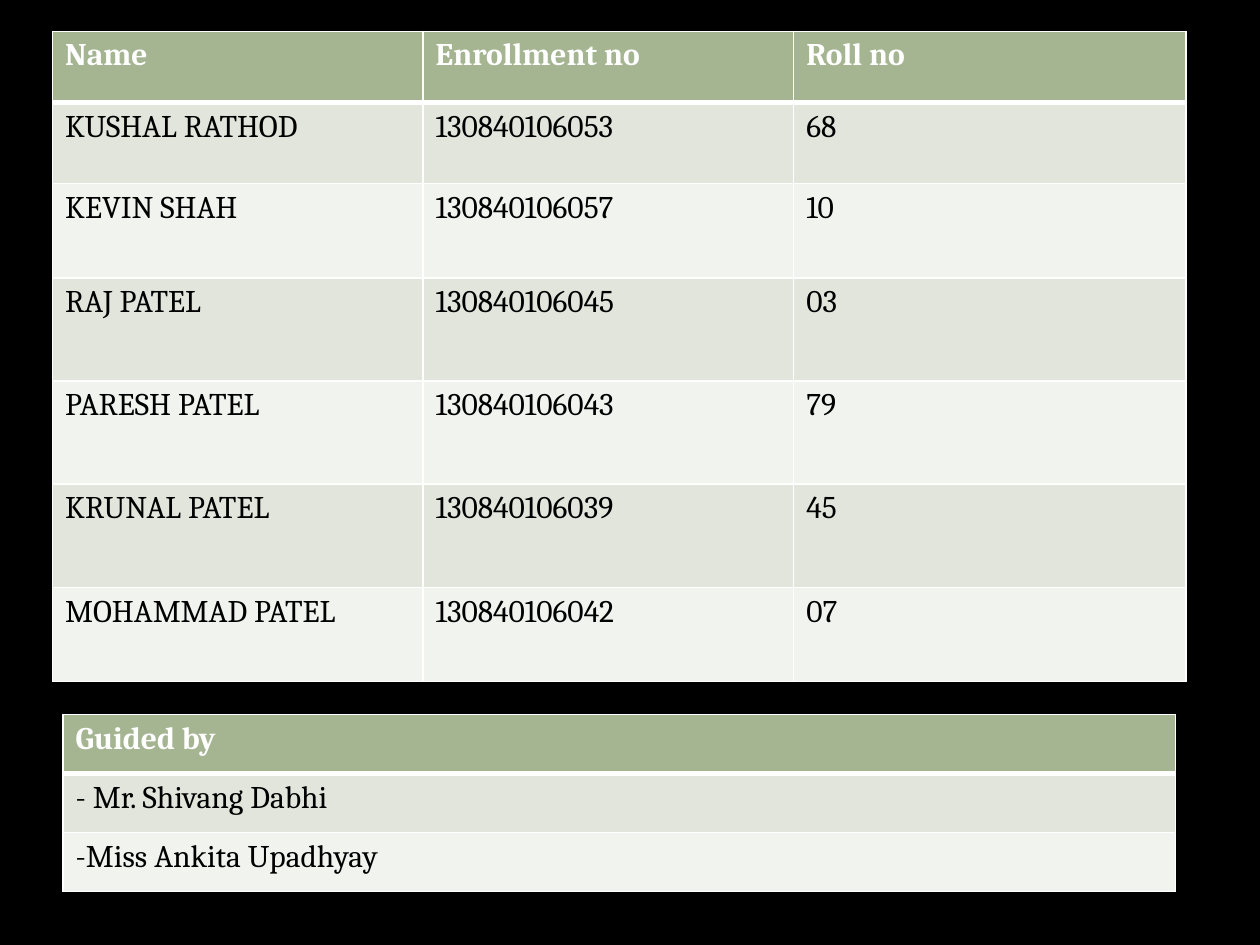
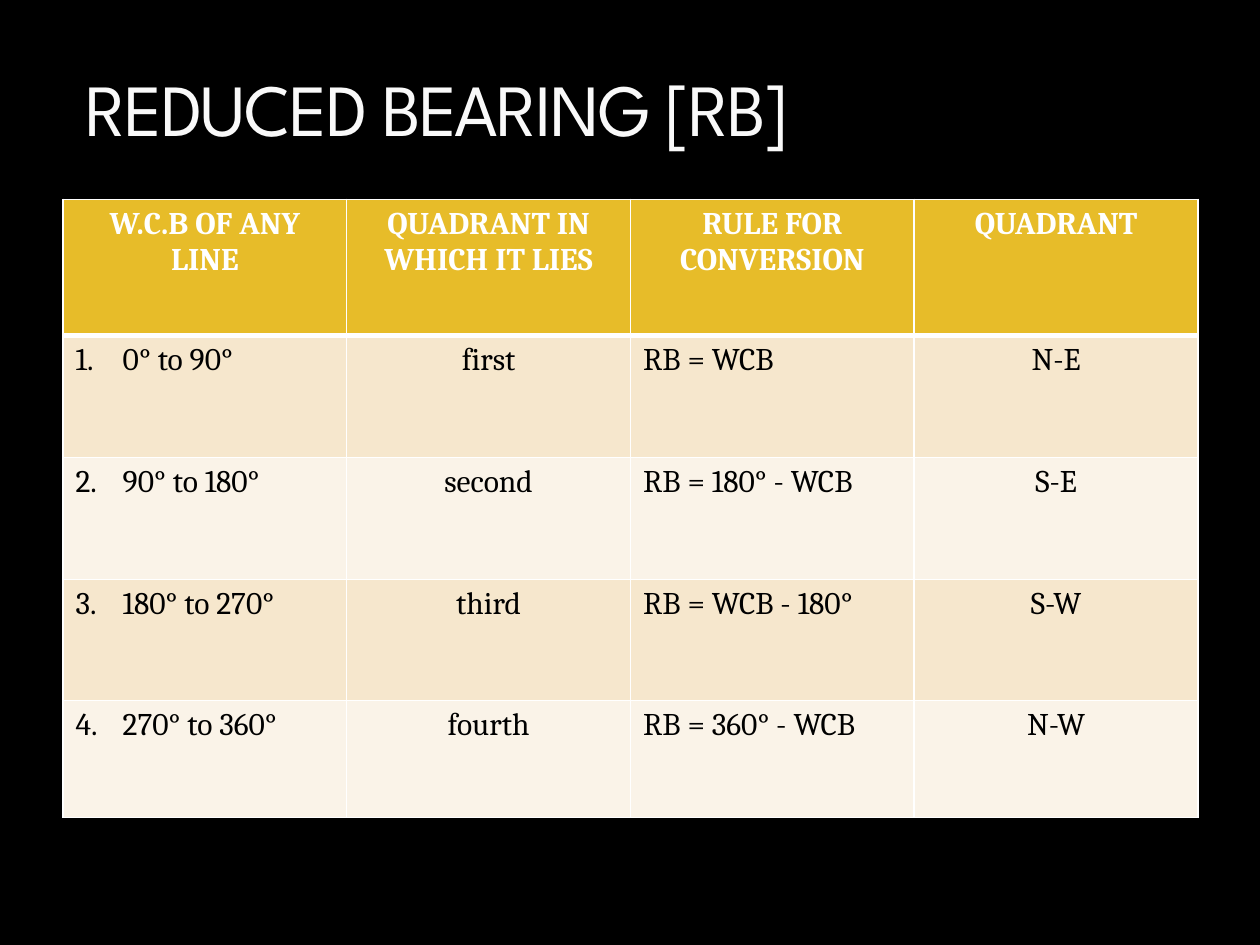
from lxml.etree import SubElement
from pptx import Presentation
from pptx.dml.color import RGBColor
from pptx.enum.text import MSO_ANCHOR, PP_ALIGN
from pptx.oxml.ns import qn
from pptx.util import Cm, Pt

STUDENTS = [
    ("Name", "Enrollment no", "Roll no"),
    ("KUSHAL RATHOD", "130840106053", "68"),
    ("KEVIN SHAH", "130840106057", "10"),
    ("RAJ PATEL", "130840106045", "03"),
    ("PARESH PATEL", "130840106043", "79"),
    ("KRUNAL PATEL", "130840106039", "45"),
    ("MOHAMMAD PATEL", "130840106042", "07"),
]
GUIDES = [("Guided by",), ("- Mr. Shivang Dabhi",), ("-Miss Ankita Upadhyay",)]
TITLE = "REDUCED BEARING [RB]"
BEARINGS = [
    ("W.C.B OF ANY LINE", "QUADRANT IN WHICH IT LIES", "RULE FOR CONVERSION", "QUADRANT"),
    ("0° to 90°", "first", "RB = WCB", "N-E"),
    ("90° to 180°", "second", "RB = 180° - WCB", "S-E"),
    ("180° to 270°", "third", "RB = WCB - 180°", "S-W"),
    ("270° to 360°", "fourth", "RB = 360° - WCB", "N-W"),
]

BLACK, WHITE, TITLE_WHITE = "000000", "FFFFFF", "F9F9F9"
GREEN = {"header": "A5B592", "bands": ("E1E5DC", "F0F3EE")}
GOLD = {"header": "E7BC29", "bands": ("F6E7CD", "FAF3E8")}
BODY_FONT, TITLE_FONT = "Cambria", "League Spartan"
LEFT, CENTER = PP_ALIGN.LEFT, PP_ALIGN.CENTER
THIN, THICK = 1, 3


def paint(fill, color):
    fill.solid()
    fill.fore_color.rgb = RGBColor.from_string(color)


def write(frame, text, size=18, font=BODY_FONT, color=BLACK, bold=False, align=LEFT, spacing=0):
    para = frame.paragraphs[0]
    para.alignment = align
    span = para.add_run()
    span.text = text
    span.font.size, span.font.name, span.font.bold = Pt(size), font, bold
    paint(span.font.fill, color)
    if spacing:
        span.font._element.set("spc", str(spacing * 100))
    return para


def number(para, start):
    properties = para._p.get_or_add_pPr()
    properties.set("marL", str(Cm(0.95)))
    properties.set("indent", str(-Cm(0.95)))
    SubElement(properties, qn("a:buFont"), typeface="+mj-lt")
    SubElement(properties, qn("a:buAutoNum"), type="arabicPeriod", startAt=str(start))


def border(cell, top, bottom):
    properties = cell._tc.get_or_add_tcPr()
    for side, width in (("L", THIN), ("R", THIN), ("T", top), ("B", bottom)):
        line = SubElement(properties, qn(f"a:ln{side}"), w=str(Pt(width)))
        SubElement(SubElement(line, qn("a:solidFill")), qn("a:srgbClr"), val=WHITE)


def add_grid(page, content, left, top, widths, heights, theme, aligns=None, header_align=LEFT, numbered=False):
    aligns = aligns or [LEFT] * len(widths)
    frame = page.shapes.add_table(len(heights), len(widths), Cm(left), Cm(top), Cm(sum(widths)), Cm(sum(heights)))
    table = frame.table
    for column, width in zip(table.columns, widths):
        column.width = Cm(width)
    for row_index, (row, height, texts) in enumerate(zip(table.rows, heights, content)):
        row.height = Cm(height)
        header = row_index == 0
        fill = theme["header"] if header else theme["bands"][(row_index - 1) % 2]
        for column_index, (cell, text) in enumerate(zip(row.cells, texts)):
            border(cell, top=THICK if row_index == 1 else THIN, bottom=THICK if header else THIN)
            paint(cell.fill, fill)
            para = write(cell.text_frame, text, color=WHITE if header else BLACK, bold=header,
                         align=header_align if header else aligns[column_index])
            if numbered and column_index == 0 and not header:
                number(para, row_index)


def add_title(page, text):
    box = page.shapes.title
    box.left, box.top, box.width, box.height = Cm(1.47), Cm(1.07), Cm(22.02), Cm(2.11)
    box.text_frame.vertical_anchor = MSO_ANCHOR.BOTTOM
    write(box.text_frame, text, size=42, font=TITLE_FONT, color=TITLE_WHITE, spacing=-1)


def main():
    deck = Presentation()
    deck.slide_width, deck.slide_height = Cm(25.4), Cm(19.05)
    paint(deck.slide_master.background.fill, BLACK)
    title_only, blank = deck.slide_layouts[5], deck.slide_layouts[6]

    team_page = deck.slides.add_slide(blank)
    add_grid(team_page, STUDENTS, 1.06, 0.63, [7.47, 7.47, 7.91],
             [1.44, 1.63, 1.9, 2.08, 2.08, 2.08, 1.9], GREEN)
    add_grid(team_page, GUIDES, 1.27, 14.4, [22.43], [1.19] * 3, GREEN)

    bearing_page = deck.slides.add_slide(title_only)
    add_title(bearing_page, TITLE)
    add_grid(bearing_page, BEARINGS, 1.27, 4.02, [5.72] * 4, [2.74, 2.46, 2.46, 2.44, 2.36], GOLD,
             aligns=[LEFT, CENTER, LEFT, CENTER], header_align=CENTER, numbered=True)

    deck.save("out.pptx")


if __name__ == "__main__":
    main()
